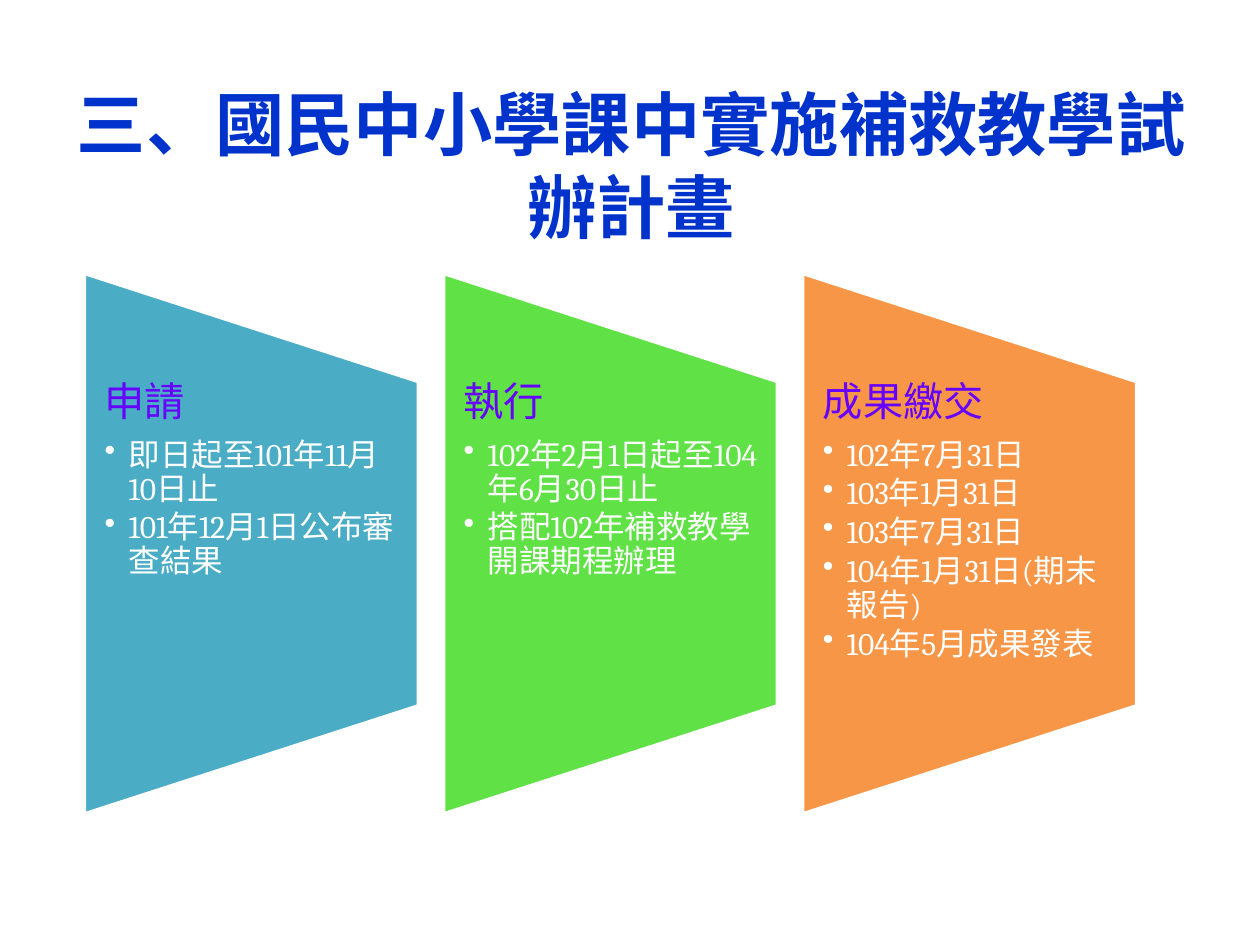
from lxml.etree import SubElement
from pptx import Presentation
from pptx.dml.color import RGBColor
from pptx.enum.shapes import MSO_SHAPE as Shape
from pptx.enum.text import MSO_ANCHOR as Anchor, PP_ALIGN as Align
from pptx.oxml.ns import qn
from pptx.util import Inches, Pt

COLORS = {
    "title": "0033CC", "heading": "6600FF", "white": "FFFFFF",
    "apply": "4BACC6", "run": "60E146", "report": "F79646",
}
STAGES = [
    ("apply", "申請", ["即日起至101年11月10日止", "101年12月1日公布審查結果"]),
    ("run", "執行", ["102年2月1日起至104年6月30日止", "搭配102年補救教學開課期程辦理"]),
    ("report", "成果繳交", ["102年7月31日", "103年1月31日", "103年7月31日",
                        "104年1月31日(期末報告)", "104年5月成果發表"]),
]

# Column grid, in inches
LEFT, PITCH, WIDTH = 0.67, 2.85, 2.65
PANEL_LENGTH, MIDDLE = 4.29, 4.315
TEXT_HEIGHT = PANEL_LENGTH * 0.6
INDENT = Inches(0.19)


def set_font(paragraph, size, color):
    font = paragraph.font
    font.name = "Cambria"
    font.size = Pt(size)
    font.color.rgb = RGBColor.from_string(COLORS[color])


def add_bullet(paragraph):
    properties = paragraph._p.get_or_add_pPr()
    properties.set("marL", str(INDENT))
    properties.set("indent", str(-INDENT))
    SubElement(properties, qn("a:buChar")).set("char", "•")


presentation = Presentation()
presentation.slide_width, presentation.slide_height = Inches(10), Inches(7.5)
slide = presentation.slides.add_slide(presentation.slide_layouts[6])

title = slide.shapes.add_textbox(Inches(0.51), Inches(0.68), Inches(9), Inches(1.25))
title.text_frame.word_wrap = True
title.text_frame.vertical_anchor = Anchor.MIDDLE
paragraph = title.text_frame.paragraphs[0]
paragraph.text = "三、國民中小學課中實施補救教學試辦計畫"
paragraph.alignment = Align.CENTER
set_font(paragraph, 39.6, "title")
paragraph.font.bold = True

for column, (color, heading, items) in enumerate(STAGES):
    left = LEFT + column * PITCH

    # The panel lies on its side, so its length is the width before rotation
    panel = slide.shapes.add_shape(
        Shape.FLOWCHART_MANUAL_OPERATION,
        Inches(left + (WIDTH - PANEL_LENGTH) / 2), Inches(MIDDLE - WIDTH / 2),
        Inches(PANEL_LENGTH), Inches(WIDTH))
    panel.rotation = 270
    panel.shadow.inherit = False
    panel.fill.solid()
    panel.fill.fore_color.rgb = RGBColor.from_string(COLORS[color])
    panel.line.color.rgb = RGBColor.from_string(COLORS["white"])
    panel.line.width = Pt(2)

    box = slide.shapes.add_textbox(Inches(left), Inches(MIDDLE - TEXT_HEIGHT / 2),
                                   Inches(WIDTH), Inches(TEXT_HEIGHT))
    frame = box.text_frame
    frame.word_wrap = True
    frame.margin_left = frame.margin_right = Inches(0.16)
    frame.margin_top = frame.margin_bottom = 0

    paragraph = frame.paragraphs[0]
    paragraph.text = heading
    paragraph.line_spacing = 0.9
    paragraph.space_after = Pt(8)
    set_font(paragraph, 23, "heading")
    for item in items:
        paragraph = frame.add_paragraph()
        paragraph.text = item
        paragraph.level = 1
        paragraph.line_spacing = 0.9
        paragraph.space_after = Pt(2.7)
        add_bullet(paragraph)
        set_font(paragraph, 18, "white")

presentation.save("out.pptx")
